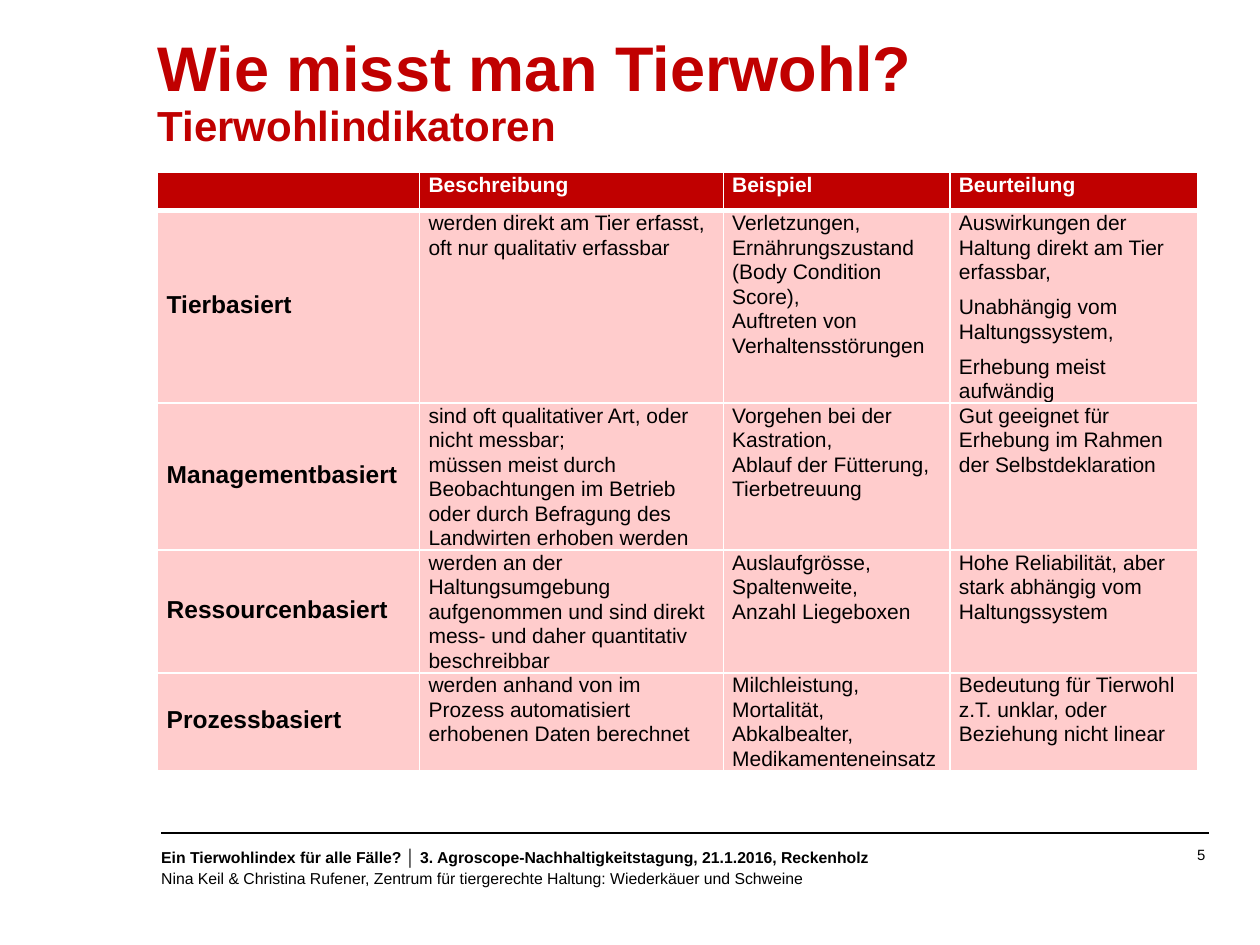
from typing import NamedTuple

from lxml import etree
from pptx import Presentation
from pptx import util as u
from pptx.dml.color import RGBColor
from pptx.enum import shapes, text
from pptx.oxml import ns

Cm, Pt = u.Cm, u.Pt
RED = RGBColor(0xC0, 0x00, 0x00)
PINK = RGBColor(0xFF, 0xCC, 0xCC)
WHITE = RGBColor(0xFF, 0xFF, 0xFF)
BLACK = RGBColor(0x00, 0x00, 0x00)
LEFT, JUST, RIGHT = text.PP_ALIGN.LEFT, text.PP_ALIGN.JUSTIFY, text.PP_ALIGN.RIGHT
TOP, MID = text.MSO_ANCHOR.TOP, text.MSO_ANCHOR.MIDDLE


class Row(NamedTuple):
    high: float
    name: str
    about: str
    case: str
    rating: str
    after: int = 0


HEAD = Row(0.74, "", "Beschreibung", "Beispiel", "Beurteilung", 6)
ROWS = [
    Row(3.86, "Tierbasiert",
        "werden direkt am Tier erfasst, oft nur qualitativ erfassbar",
        "Verletzungen, Ernährungszustand (Body Condition Score), \v"
        "Auftreten von Verhaltensstörungen",
        "Auswirkungen der Haltung direkt am Tier erfassbar,\n"
        "Unabhängig vom Haltungssystem,\nErhebung meist aufwändig", 6),
    Row(2.96, "Managementbasiert",
        "sind oft qualitativer Art, oder nicht messbar; \v"
        "müssen meist durch Beobachtungen im Betrieb oder durch "
        "Befragung des Landwirten erhoben werden",
        "Vorgehen bei der Kastration, \vAblauf der Fütterung, Tierbetreuung",
        "Gut geeignet für Erhebung im Rahmen der Selbstdeklaration", 6),
    Row(2.47, "Ressourcenbasiert",
        "werden an der Haltungsumgebung aufgenommen und sind direkt "
        "mess- und daher quantitativ beschreibbar",
        "Auslaufgrösse, Spaltenweite, \vAnzahl Liegeboxen",
        "Hohe Reliabilität, aber stark abhängig vom Haltungssystem"),
    Row(1.98, "Prozessbasiert",
        "werden anhand von im Prozess automatisiert erhobenen Daten berechnet",
        "Milchleistung, Mortalität, Abkalbealter, Medikamenteneinsatz",
        "Bedeutung für Tierwohl z.T. unklar, oder Beziehung nicht linear"),
]
COLS = [5.28, 6.12, 4.57, 5.0]


def put(frame, words: str, *, size: float, color=BLACK, bold=False,
        align=LEFT, gap=None, after=0) -> None:
    """Fill a text frame; each newline starts a paragraph."""
    frame.text = words
    for par in frame.paragraphs:
        par.alignment = align
        par.line_spacing = gap
        par.space_after = Pt(after)
        for run in par.runs:
            font = run.font
            font.name, font.size, font.bold = "Arial", Pt(size), bold
            font.color.rgb = color


def box(slide, x: float, y: float, w: float, h: float, pad=(0, 0)):
    """Add a wrapping text box and return its frame."""
    frame = slide.shapes.add_textbox(Cm(x), Cm(y), Cm(w), Cm(h)).text_frame
    frame.word_wrap = True
    frame.margin_left = frame.margin_right = Cm(pad[0])
    frame.margin_top = frame.margin_bottom = Cm(pad[1])
    return frame


def edge(cell, base: float) -> None:
    """Draw white cell borders, the bottom one base points wide."""
    props = cell._tc.get_or_add_tcPr()
    for spot, (side, wide) in enumerate(
            [("L", 1), ("R", 1), ("T", 1), ("B", base)]):
        line = etree.Element(ns.qn(f"a:ln{side}"), w=str(Pt(wide)))
        fill = etree.SubElement(line, ns.qn("a:solidFill"))
        etree.SubElement(fill, ns.qn("a:srgbClr"), val=str(WHITE))
        props.insert(spot, line)


def grid(slide) -> None:
    rows = [HEAD, *ROWS]
    table = slide.shapes.add_table(
        len(rows), len(COLS), Cm(3.18), Cm(3.48), Cm(sum(COLS)),
        Cm(sum(row.high for row in rows))).table
    for col, wide in zip(table.columns, COLS):
        col.width = Cm(wide)
    for r, row in enumerate(rows):
        table.rows[r].height = Cm(row.high)
        top = row is HEAD
        for c, words in enumerate([row.name, row.about, row.case, row.rating]):
            cell, first = table.cell(r, c), c == 0
            cell.margin_left = cell.margin_right = Cm(0.18)
            cell.margin_top = cell.margin_bottom = 0
            cell.vertical_anchor = MID if first and not top else TOP
            cell.fill.solid()
            cell.fill.fore_color.rgb = RED if top else PINK
            put(cell.text_frame, words, size=14 if first else 12,
                color=WHITE if top else BLACK, bold=top or first,
                align=JUST if top or first else LEFT, gap=Pt(14),
                after=row.after if top or c > 1 else 0)
            edge(cell, 3 if top else 1)


def foot(slide) -> None:
    rule = slide.shapes.add_connector(
        shapes.MSO_CONNECTOR.STRAIGHT, Cm(3.25), Cm(16.79), Cm(24.38), Cm(16.79))
    rule.line.color.rgb = BLACK
    rule.line.width = Pt(0.75)
    etree.SubElement(rule._element.spPr, ns.qn("a:effectLst"))

    put(box(slide, 18.08, 17.02, 6.22, 0.36), "5", size=8.5,
        align=RIGHT, gap=1.05)
    note = box(slide, 3.0, 16.92, 17.22, 1.12, pad=(0.25, 0.13))
    put(note, "Ein Tierwohlindex für alle Fälle? │ 3. Agroscope-Nachhaltigkeitstagung, "
        "21.1.2016, Reckenholz\nNina Keil & Christina Rufener, Zentrum für "
        "tiergerechte Haltung: Wiederkäuer und Schweine", size=9, gap=Pt(12))
    note.paragraphs[0].runs[0].font.bold = True


def main() -> None:
    deck = Presentation()
    deck.slide_width, deck.slide_height = Cm(25.4), Cm(19.05)
    slide = deck.slides.add_slide(deck.slide_layouts[6])
    foot(slide)
    grid(slide)
    title = box(slide, 3.18, 0.74, 22.15, 2.74)
    put(title, "Wie misst man Tierwohl?\vTierwohlindikatoren",
        size=36, color=RED, bold=True, gap=0.9)
    title.paragraphs[0].runs[1].font.size = Pt(24)
    deck.save("out.pptx")


if __name__ == "__main__":
    main()
